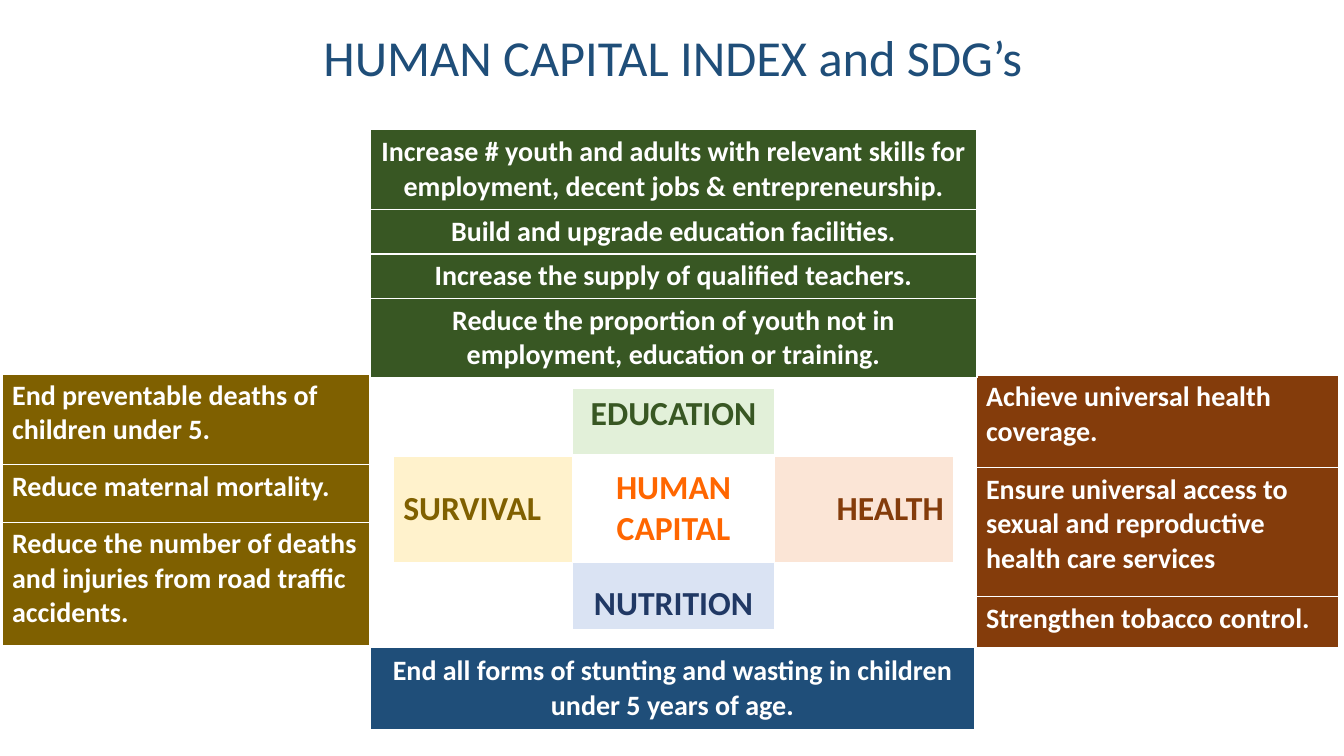
from lxml.etree import SubElement
from pptx import Presentation
from pptx.dml.color import RGBColor
from pptx.enum.text import MSO_ANCHOR as Anchor, MSO_AUTO_SIZE as AutoSize, PP_ALIGN as Align
from pptx.oxml.ns import qn
from pptx.util import Inches, Pt

FONT = "Calibri"
WHITE = RGBColor(0xFF, 0xFF, 0xFF)
NAVY = RGBColor(0x1F, 0x4E, 0x79)
GREEN, PALE_GREEN = RGBColor(0x38, 0x57, 0x23), RGBColor(0xE2, 0xF0, 0xD9)
OLIVE, GOLD = RGBColor(0x7F, 0x60, 0x00), RGBColor(0x80, 0x60, 0x00)
PALE_GOLD = RGBColor(0xFF, 0xF2, 0xCC)
BROWN, PALE_BROWN = RGBColor(0x84, 0x3C, 0x0B), RGBColor(0xFB, 0xE5, 0xD6)
INDIGO, PALE_BLUE = RGBColor(0x20, 0x38, 0x64), RGBColor(0xDA, 0xE3, 0xF3)
ORANGE = RGBColor(0xFF, 0x66, 0x00)

# Content
TITLE = "HUMAN CAPITAL INDEX and SDG’s"

# Goal blocks: left, top, width, row heights, fill, alignment, anchor, goals
GOAL_BLOCKS = [
    (0.02, 3.71, 3.65, [0.9, 0.57, 1.23], OLIVE, Align.LEFT, Anchor.TOP, [
        "End preventable deaths of children under 5.",
        "Reduce maternal mortality.",
        "Reduce the number of deaths and injuries from road traffic accidents."]),
    (3.67, 6.42, 6, [0.82], NAVY, Align.CENTER, Anchor.MIDDLE, [
        "End all forms of stunting and wasting in children under 5 years of age."]),
    (9.68, 3.72, 3.6, [0.92, 1.28, 0.5], BROWN, Align.LEFT, Anchor.TOP, [
        "Achieve universal health coverage.",
        "Ensure universal access to sexual and reproductive health care services",
        "Strengthen tobacco control."]),
    (3.67, 1.28, 6.02, [0.8, 0.43, 0.43, 0.76], GREEN, Align.CENTER, Anchor.MIDDLE, [
        "Increase # youth and adults with relevant skills for employment, "
        "decent jobs & entrepreneurship.",
        "Build and upgrade education facilities.",
        "Increase the supply of qualified teachers.",
        "Reduce the proportion of youth not in employment, education or training."]),
]

# Central cross: (row, column): text, colour, fill, alignment, anchor
CROSS_COLUMNS, CROSS_ROWS = [1.78, 2, 1.78], [0.67, 1.06, 0.67]
PILLARS = {
    (0, 1): ("EDUCATION", GREEN, PALE_GREEN, Align.CENTER, Anchor.TOP),
    (1, 0): ("SURVIVAL", GOLD, PALE_GOLD, Align.LEFT, Anchor.MIDDLE),
    (1, 1): ("HUMAN CAPITAL", ORANGE, None, Align.CENTER, Anchor.MIDDLE),
    (1, 2): ("HEALTH", BROWN, PALE_BROWN, Align.RIGHT, Anchor.MIDDLE),
    (2, 1): ("NUTRITION", INDIGO, PALE_BLUE, Align.CENTER, Anchor.BOTTOM),
}


def add_grid(slide, left, top, columns, rows):
    """Add a plain table with white rules and no fill."""
    grid = slide.shapes.add_table(
        len(rows), len(columns), Inches(left), Inches(top),
        Inches(sum(columns)), Inches(sum(rows))).table
    grid.first_row = grid.horz_banding = False
    for column, width in zip(grid.columns, columns):
        column.width = Inches(width)
    for row, height in zip(grid.rows, rows):
        row.height = Inches(height)
    for cell in grid.iter_cells():
        properties = cell._tc.get_or_add_tcPr()
        for side in ("a:lnL", "a:lnR", "a:lnT", "a:lnB"):
            rule = SubElement(properties, qn(side), w=str(Pt(1)))
            SubElement(SubElement(rule, qn("a:solidFill")), qn("a:srgbClr"), val=str(WHITE))
        cell.fill.background()
    return grid


def style(paragraph, size, color, align, bold=True):
    paragraph.alignment = align
    for run in paragraph.runs:
        run.font.name, run.font.size, run.font.bold = FONT, Pt(size), bold
        run.font.color.rgb = color


def fill_cell(cell, text, size, color, fill, align, anchor):
    cell.text_frame.text = text
    cell.vertical_anchor = anchor
    style(cell.text_frame.paragraphs[0], size, color, align)
    if fill is not None:
        cell.fill.solid()
        cell.fill.fore_color.rgb = fill


def main():
    deck = Presentation()
    deck.slide_width, deck.slide_height = Inches(13.33), Inches(7.5)
    slide = deck.slides.add_slide(deck.slide_layouts[5])

    # Title
    title = slide.shapes.title
    title.left, title.top = Inches(2.33), Inches(0.2)
    title.width, title.height = Inches(8.69), Inches(0.71)
    title.text_frame.text = TITLE
    title.text_frame.auto_size = AutoSize.NONE
    style(title.text_frame.paragraphs[0], 36, NAVY, Align.CENTER, bold=False)

    # Central cross of pillars
    cross = add_grid(slide, 3.9, 3.85, CROSS_COLUMNS, CROSS_ROWS)
    for (row, column), (text, color, fill, align, anchor) in PILLARS.items():
        fill_cell(cross.cell(row, column), text, 24, color, fill, align, anchor)
    for column in range(len(CROSS_COLUMNS)):
        cross.cell(0, column)._tc.tcPr.find(qn("a:lnB")).set("w", str(Pt(3)))

    # Goals around the cross
    for left, top, width, rows, fill, align, anchor, goals in GOAL_BLOCKS:
        block = add_grid(slide, left, top, [width], rows)
        for row, goal in enumerate(goals):
            fill_cell(block.cell(row, 0), goal, 20, WHITE, fill, align, anchor)

    deck.save("out.pptx")


if __name__ == "__main__":
    main()
